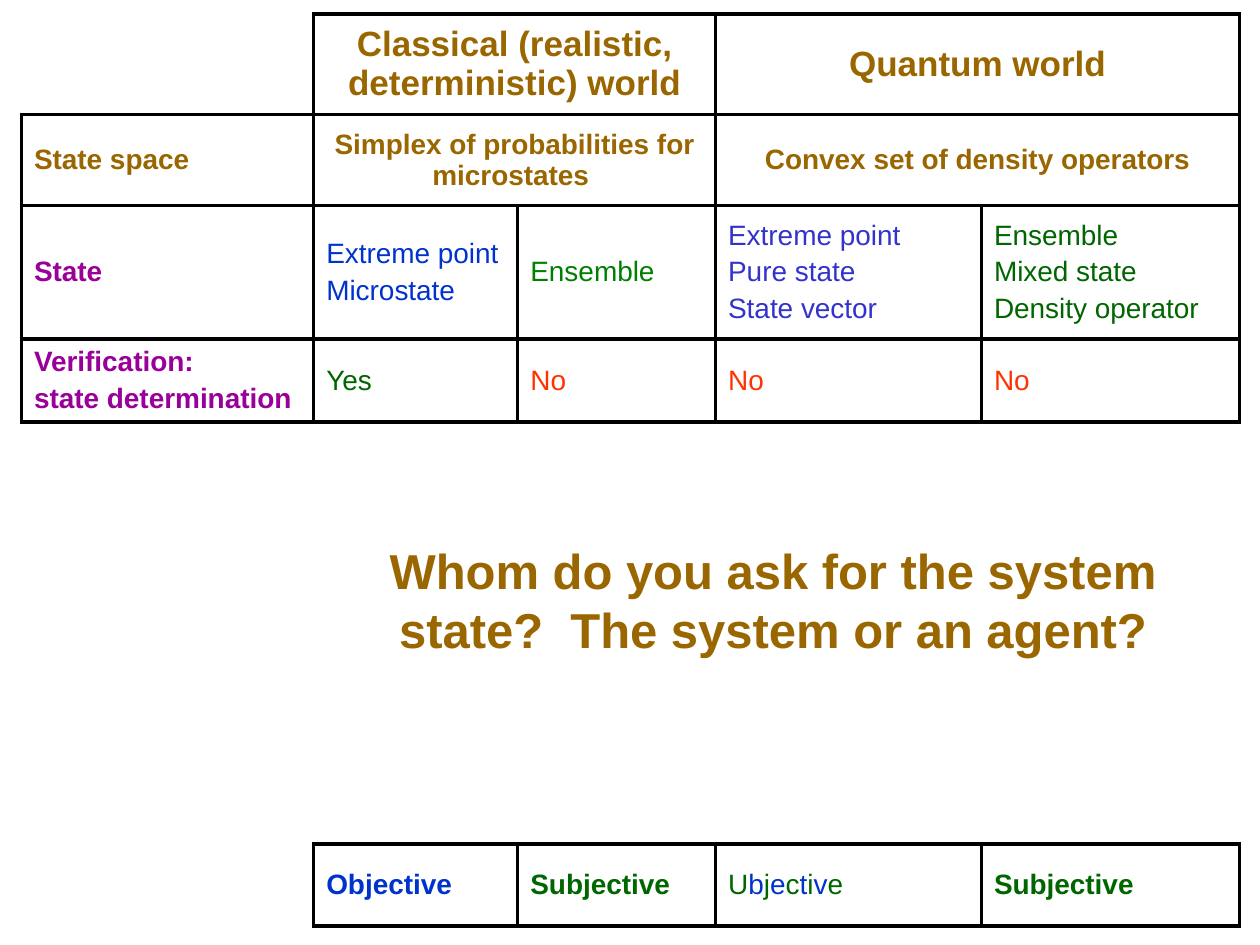
from lxml.etree import SubElement
from pptx import Presentation
from pptx.dml.color import RGBColor
from pptx.enum.text import MSO_ANCHOR, MSO_AUTO_SIZE, PP_ALIGN
from pptx.oxml import parse_xml
from pptx.oxml.ns import nsdecls, qn
from pptx.util import Inches, Pt

FONT = "Arial"
BROWN = RGBColor(0x99, 0x66, 0x00)
PURPLE = RGBColor(0x99, 0x00, 0x99)
BLUE = RGBColor(0x00, 0x33, 0xCC)
INDIGO = RGBColor(0x33, 0x33, 0xCC)
GREEN = RGBColor(0x00, 0x80, 0x00)
DARK_GREEN = RGBColor(0x00, 0x66, 0x00)
RED = RGBColor(0xFF, 0x33, 0x00)
BLACK = RGBColor(0x00, 0x00, 0x00)

# Content: each cell is (column, columns spanned, text, colour(s), bold, size)
# Several colours alternate letter by letter.
COLUMN_WIDTHS = [2.32, 1.62, 1.57, 2.11, 2.05]
COMPARISON = [
    [(1, 2, "Classical (realistic, deterministic) world", [BROWN], True, 20),
     (3, 2, "Quantum world", [BROWN], True, 20)],
    [(0, 1, "State space", [BROWN], True, 16),
     (1, 2, "Simplex of probabilities for microstates ", [BROWN], True, 16),
     (3, 2, "Convex set of density operators", [BROWN], True, 16)],
    [(0, 1, "State", [PURPLE], True, 16),
     (1, 1, "Extreme point\nMicrostate", [BLUE], False, 16),
     (2, 1, "Ensemble", [GREEN], False, 16),
     (3, 1, "Extreme point\nPure state\nState vector", [INDIGO], False, 16),
     (4, 1, "Ensemble\nMixed state\nDensity operator", [DARK_GREEN], False, 16)],
    [(0, 1, "Verification:\nstate determination", [PURPLE], True, 16),
     (1, 1, "Yes", [DARK_GREEN], False, 16),
     (2, 1, "No", [RED], False, 16),
     (3, 1, "No", [RED], False, 16),
     (4, 1, "No", [RED], False, 16)],
]
VERDICT = [
    [(1, 1, "Objective", [BLUE], True, 16),
     (2, 1, "Subjective", [DARK_GREEN], True, 16),
     (3, 1, "Ubjective", [DARK_GREEN, BLUE], False, 16),
     (4, 1, "Subjective", [DARK_GREEN], True, 16)],
]
QUESTION = "Whom do you ask for the system state?  The system or an agent?"


def style_run(run, size, color, bold):
    run.font.name = FONT
    run.font.size = Pt(size)
    run.font.bold = bold
    run.font.color.rgb = color


def set_borders(cell, sides):
    properties = cell._tc.get_or_add_tcPr()
    for index, side in enumerate("LRTB"):
        if side in sides:
            fill = f'<a:solidFill><a:srgbClr val="{BLACK}"/></a:solidFill>'
        else:
            fill = "<a:noFill/>"
        line = parse_xml(f'<a:ln{side} {nsdecls("a")} w="{Pt(2.25)}">{fill}</a:ln{side}>')
        properties.insert(index, line)


def fill_cell(cell, text, colors, bold, size, centered):
    cell.text_frame.text = text
    for paragraph in cell.text_frame.paragraphs:
        paragraph.alignment = PP_ALIGN.CENTER if centered else PP_ALIGN.LEFT
        spacing = SubElement(paragraph._p.get_or_add_pPr(), qn("a:spcBef"))
        SubElement(spacing, qn("a:spcPct")).set("val", "20000")
        if len(colors) > 1:
            letters = paragraph.text
            paragraph.clear()
            for letter in letters:
                paragraph.add_run().text = letter
        for index, run in enumerate(paragraph.runs):
            style_run(run, size, colors[index % len(colors)], bold)


def add_grid(slide, top, row_heights, rows, corner_borders):
    frame = slide.shapes.add_table(
        len(rows), len(COLUMN_WIDTHS), Inches(0.17), Inches(top),
        Inches(sum(COLUMN_WIDTHS)), Inches(sum(row_heights)))
    table = frame.table
    table.first_row = table.horz_banding = False
    for column, width in zip(table.columns, COLUMN_WIDTHS):
        column.width = Inches(width)
    for row, height in zip(table.rows, row_heights):
        row.height = Inches(height)

    # Plain cells with black rules; the top left corner stays open
    for cell in table.iter_cells():
        cell.fill.background()
        cell.vertical_anchor = MSO_ANCHOR.MIDDLE
        set_borders(cell, "LRTB")
    corner = table.cell(0, 0)
    for side in "LRTB":
        corner._tc.tcPr.remove(corner._tc.tcPr.find(qn(f"a:ln{side}")))
    set_borders(corner, corner_borders)

    for row_index, entries in enumerate(rows):
        for column, span, text, colors, bold, size in entries:
            cell = table.cell(row_index, column)
            if span > 1:
                cell.merge(table.cell(row_index, column + span - 1))
            fill_cell(cell, text, colors, bold, size, centered=span > 1)


presentation = Presentation()
presentation.slide_width = Inches(10)
presentation.slide_height = Inches(7.5)
slide = presentation.slides.add_slide(presentation.slide_layouts[6])

# Comparison at the top, verdict at the bottom
add_grid(slide, 0.11, [0.8, 0.72, 1.06, 0.66], COMPARISON, "RB")
add_grid(slide, 6.7, [0.65], VERDICT, "R")

# Question between the tables
question = slide.shapes.add_textbox(Inches(2.7), Inches(4.24), Inches(6.87), Inches(1.04))
text_frame = question.text_frame
text_frame.word_wrap = True
text_frame.auto_size = MSO_AUTO_SIZE.SHAPE_TO_FIT_TEXT
text_frame.text = QUESTION
paragraph = text_frame.paragraphs[0]
paragraph.alignment = PP_ALIGN.CENTER
style_run(paragraph.runs[0], 28, BROWN, True)

presentation.save("out.pptx")
